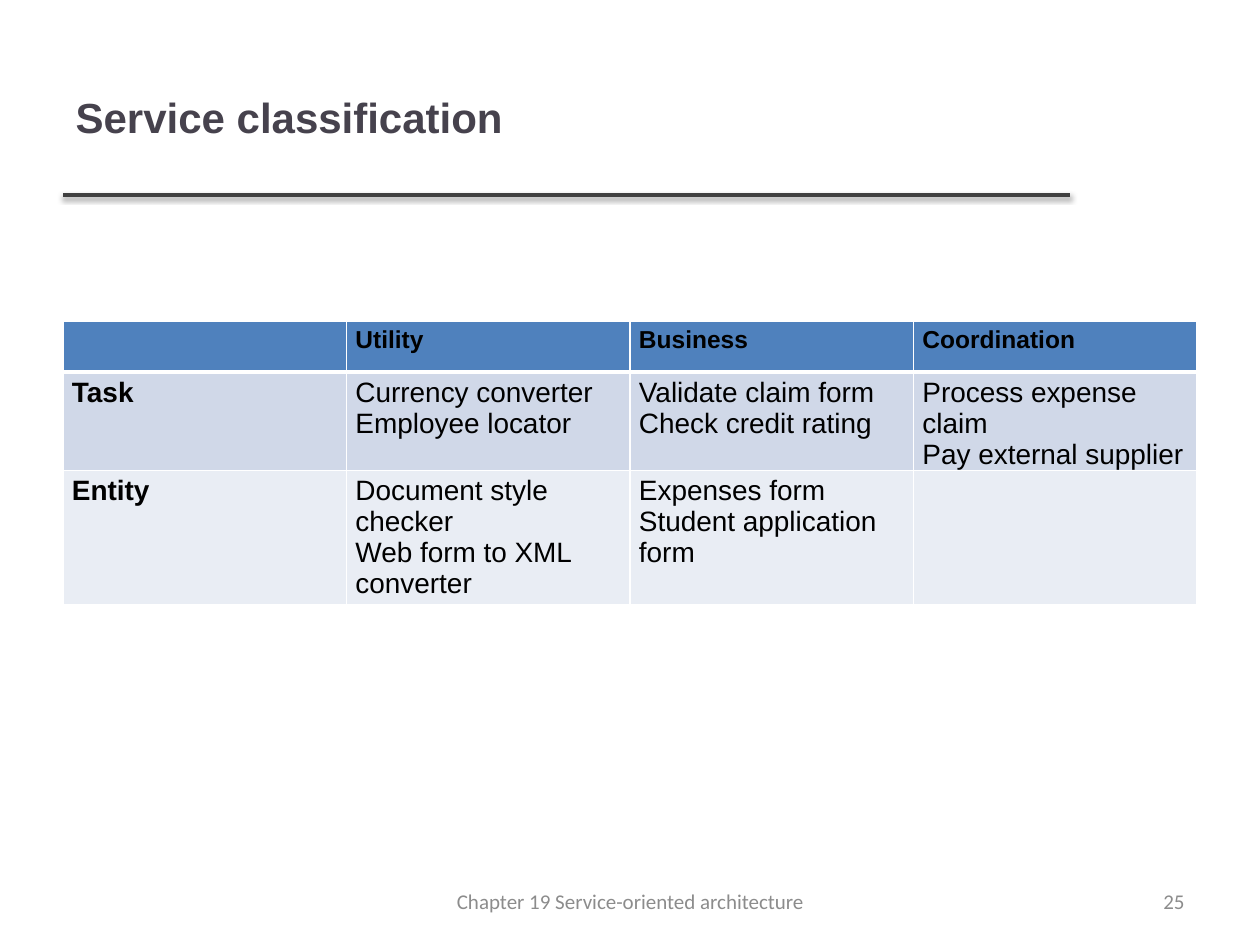
"""Build the service classification slide: a ruled title, a table and a footer."""
from lxml import etree
from pptx import Presentation, util as u
from pptx.dml.color import RGBColor
from pptx.enum import shapes, text
from pptx.oxml import ns, parse_xml

TITLE = "Service classification"
ROWS = [
    [[], ["Utility"], ["Business"], ["Coordination"]],
    [["Task"], ["Currency converter", "Employee locator"],
     ["Validate claim form", "Check credit rating"],
     ["Process expense claim", "Pay external supplier"]],
    [["Entity"], ["Document style checker", "Web form to XML converter"],
     ["Expenses form", "Student application form"], []],
]
FOOTERS = [
    ("25", (903, 876, 294, 50), text.PP_ALIGN.RIGHT),
    ("Chapter 19 Service-oriented architecture", (431, 876, 399, 50), text.PP_ALIGN.CENTER),
]
COLOURS = {"title": "46424D", "rule": "404040", "ink": "000000", "footer": "8C8C8C",
           "border": "FFFFFF"}
ROW_FILLS = ["4F81BD", "D0D8E8", "E9EDF4"]
ROW_HEIGHTS = [51, 98, 134]
ROW_SIZES = [14, 16, 16]
COLUMN_WIDTH = 283.5
MARGINS = {"margin_left": 9, "margin_top": 5, "margin_right": 9, "margin_bottom": 0}
SHADOW = (
    f'<a:effectLst {ns.nsdecls("a")}><a:outerShdw blurRad="39370" dist="20320" dir="5400000" '
    'rotWithShape="0"><a:srgbClr val="000000"><a:alpha val="38000"/></a:srgbClr>'
    '</a:outerShdw></a:effectLst>'
)


def px(length):
    return u.Emu(round(length * 914400 / 126))


def write(frame, lines, align, colour, **font):
    for index, line in enumerate(lines):
        para = frame.paragraphs[0] if index == 0 else frame.add_paragraph()
        para.alignment = align
        span = para.add_run()
        span.text = line
        span.font.color.rgb = RGBColor.from_string(COLOURS[colour])
        for name, value in font.items():
            setattr(span.font, name, value)


def add_borders(cell, bottom):
    properties = cell._tc.get_or_add_tcPr()
    for index, side in enumerate("LRTB"):
        width = bottom if side == "B" else 1
        line = etree.Element(ns.qn(f"a:ln{side}"), w=str(u.Pt(width)))
        fill = etree.SubElement(line, ns.qn("a:solidFill"))
        etree.SubElement(fill, ns.qn("a:srgbClr"), val=COLOURS["border"])
        properties.insert(index, line)


def add_title(page):
    title = page.shapes.title
    title.left, title.top, title.width, title.height = map(px, (63, 38, 1006, 195 - 38))
    title.text_frame.vertical_anchor = text.MSO_ANCHOR.MIDDLE
    write(title.text_frame, [TITLE], text.PP_ALIGN.LEFT, "title",
          name="Arial", size=u.Pt(24), bold=True)
    rule = page.shapes.add_connector(shapes.MSO_CONNECTOR.STRAIGHT,
                                     *map(px, (63, 195, 1070, 195)))
    rule.line.color.rgb = RGBColor.from_string(COLOURS["rule"])
    rule.line.width = u.Pt(2)
    rule._element.spPr.append(parse_xml(SHADOW))


def add_classification(page):
    columns = len(ROWS[0])
    table = page.shapes.add_table(
        len(ROWS), columns, px(63), px(321), px(COLUMN_WIDTH * columns), px(sum(ROW_HEIGHTS))
    ).table
    for column in table.columns:
        column.width = px(COLUMN_WIDTH)
    for r, row in enumerate(ROWS):
        table.rows[r].height = px(ROW_HEIGHTS[r])
        for c, lines in enumerate(row):
            cell = table.cell(r, c)
            for name, value in MARGINS.items():
                setattr(cell, name, px(value))
            cell.fill.solid()
            cell.fill.fore_color.rgb = RGBColor.from_string(ROW_FILLS[r])
            add_borders(cell, 3 if r == 0 else 1)
            heading = r == 0 or c == 0
            align = text.PP_ALIGN.JUSTIFY if heading else text.PP_ALIGN.LEFT
            write(cell.text_frame, lines, align, "ink",
                  name="Arial", size=u.Pt(ROW_SIZES[r]), bold=heading)


def add_footers(page):
    for line, place, align in FOOTERS:
        frame = page.shapes.add_textbox(*map(px, place)).text_frame
        frame.word_wrap = True
        frame.vertical_anchor = text.MSO_ANCHOR.MIDDLE
        write(frame, [line], align, "footer", name="Calibri", size=u.Pt(12))


def main():
    deck = Presentation()
    deck.slide_width, deck.slide_height = px(1260), px(945)
    page = deck.slides.add_slide(deck.slide_layouts.get_by_name("Title Only"))
    add_title(page)
    add_classification(page)
    add_footers(page)
    deck.save("out.pptx")


if __name__ == "__main__":
    main()
